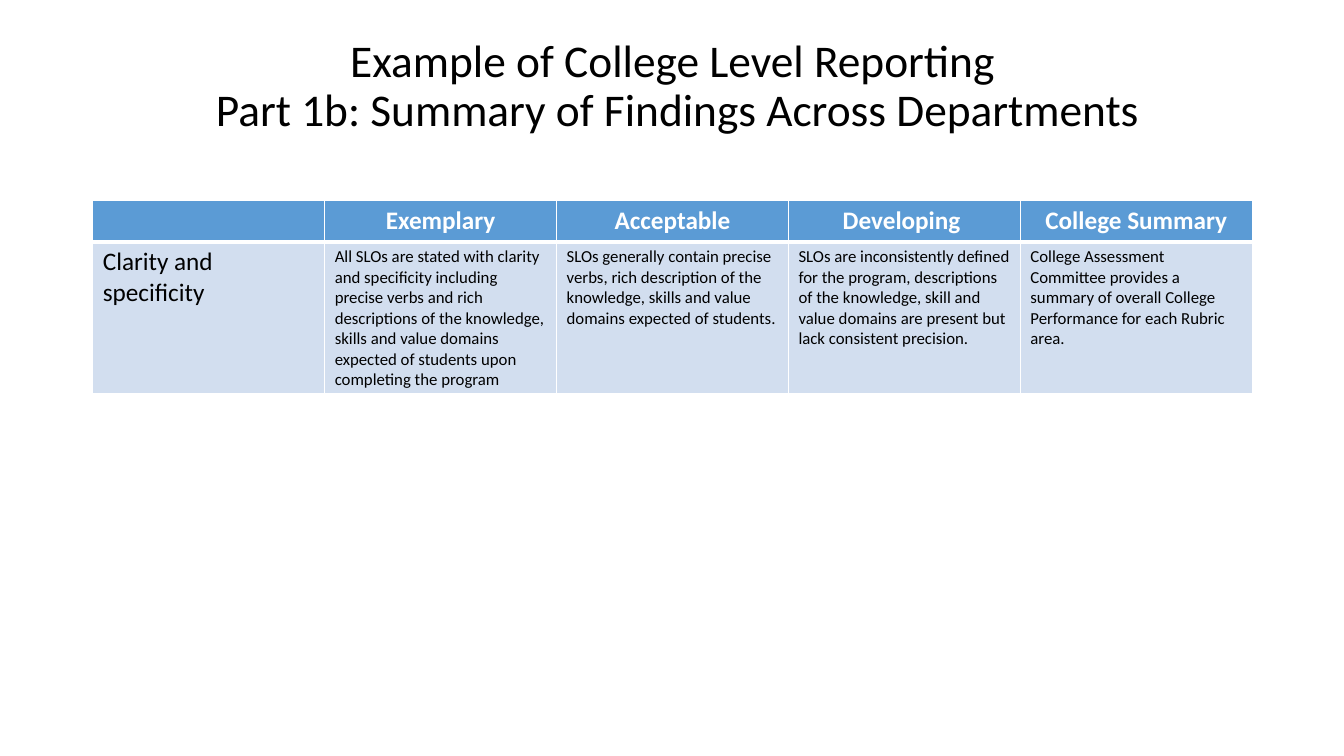
import pptx
import pptx.util
import pptx.dml.color
import pptx.enum.text
import lxml.etree
from pptx.util import Inches

WHITE = pptx.dml.color.RGBColor(0xFF, 0xFF, 0xFF)
BLACK = pptx.dml.color.RGBColor(0x00, 0x00, 0x00)
HEADER_BLUE = pptx.dml.color.RGBColor(0x5B, 0x9B, 0xD5)
BODY_BLUE = pptx.dml.color.RGBColor(0xD2, 0xDE, 0xEF)
FONT = "Calibri"
CENTER = pptx.enum.text.PP_ALIGN.CENTER
LEFT = pptx.enum.text.PP_ALIGN.LEFT

TITLE_LINES = [
    "Example of College Level Reporting",
    " Part 1b: Summary of Findings Across Departments",
]
HEADINGS = ["", "Exemplary", "Acceptable", "Developing ", "College Summary"]
CRITERION = [
    "Clarity and specificity",
    "All SLOs are stated with clarity and specificity including precise verbs and rich "
    "descriptions of the knowledge, skills and value domains expected of students upon "
    "completing the program",
    "SLOs generally contain precise verbs, rich description of the knowledge, skills and "
    "value domains expected of students.",
    "SLOs are inconsistently defined for the program, descriptions of the knowledge, skill "
    "and value domains are present but lack consistent precision.",
    "College Assessment Committee provides a summary of overall College Performance for "
    "each Rubric area.",
]
ROW_HEIGHTS = [0.41, 1.5]
COLUMN_WIDTH = 2.3


def add_run(paragraph, text, size, color, bold=False):
    """Append one formatted run to a paragraph."""
    run = paragraph.add_run()
    run.text = text
    run.font.name = FONT
    run.font.size = pptx.util.Pt(size)
    run.font.bold = bold
    run.font.color.rgb = color


def add_title(slide, lines):
    """Place the centred title at the top of the slide."""
    title = slide.shapes.add_textbox(Inches(0.92), Inches(0.4), Inches(11.5), Inches(0.93))
    frame = title.text_frame
    frame.word_wrap = True
    frame.vertical_anchor = pptx.enum.text.MSO_ANCHOR.MIDDLE
    paragraph = frame.paragraphs[0]
    paragraph.alignment = CENTER
    paragraph.line_spacing = 0.9
    for index, line in enumerate(lines):
        if index:
            paragraph.add_line_break()
        add_run(paragraph, line, 32.4, BLACK)


def set_borders(cell, top, bottom):
    """Give a cell white borders with the stated top and bottom widths in points."""
    properties = cell._tc.get_or_add_tcPr()
    for side, width in (("L", 1), ("R", 1), ("T", top), ("B", bottom)):
        line = lxml.etree.SubElement(properties, pptx.oxml.ns.qn(f"a:ln{side}"))
        line.set("w", str(pptx.util.Pt(width)))
        fill = lxml.etree.SubElement(line, pptx.oxml.ns.qn("a:solidFill"))
        color = lxml.etree.SubElement(fill, pptx.oxml.ns.qn("a:srgbClr"))
        color.set("val", str(WHITE))


def fill_cell(cell, text, size, color, background, alignment, bold, borders):
    """Write and format one table cell."""
    set_borders(cell, *borders)
    cell.fill.solid()
    cell.fill.fore_color.rgb = background
    paragraph = cell.text_frame.paragraphs[0]
    paragraph.alignment = alignment
    if text:
        add_run(paragraph, text, size, color, bold)


def add_rubric(slide):
    """Build the rubric table with its heading row and criterion row."""
    rubric = slide.shapes.add_table(
        len(ROW_HEIGHTS), len(HEADINGS), Inches(0.92), Inches(1.99),
        Inches(COLUMN_WIDTH * len(HEADINGS)), Inches(sum(ROW_HEIGHTS)),
    ).table
    for row, height in zip(rubric.rows, ROW_HEIGHTS):
        row.height = Inches(height)
    for column, (heading, finding) in enumerate(zip(HEADINGS, CRITERION)):
        rubric.columns[column].width = Inches(COLUMN_WIDTH)
        fill_cell(rubric.cell(0, column), heading, 18, WHITE, HEADER_BLUE, CENTER, True, (1, 3))
        size = 12 if column else 18
        fill_cell(rubric.cell(1, column), finding, size, BLACK, BODY_BLUE, LEFT, False, (3, 1))


def main():
    """Create the slide and save it."""
    presentation = pptx.Presentation()
    presentation.slide_width = Inches(13.33)
    presentation.slide_height = Inches(7.5)
    slide = presentation.slides.add_slide(presentation.slide_layouts[6])
    add_title(slide, TITLE_LINES)
    add_rubric(slide)
    presentation.save("out.pptx")


if __name__ == "__main__":
    main()
